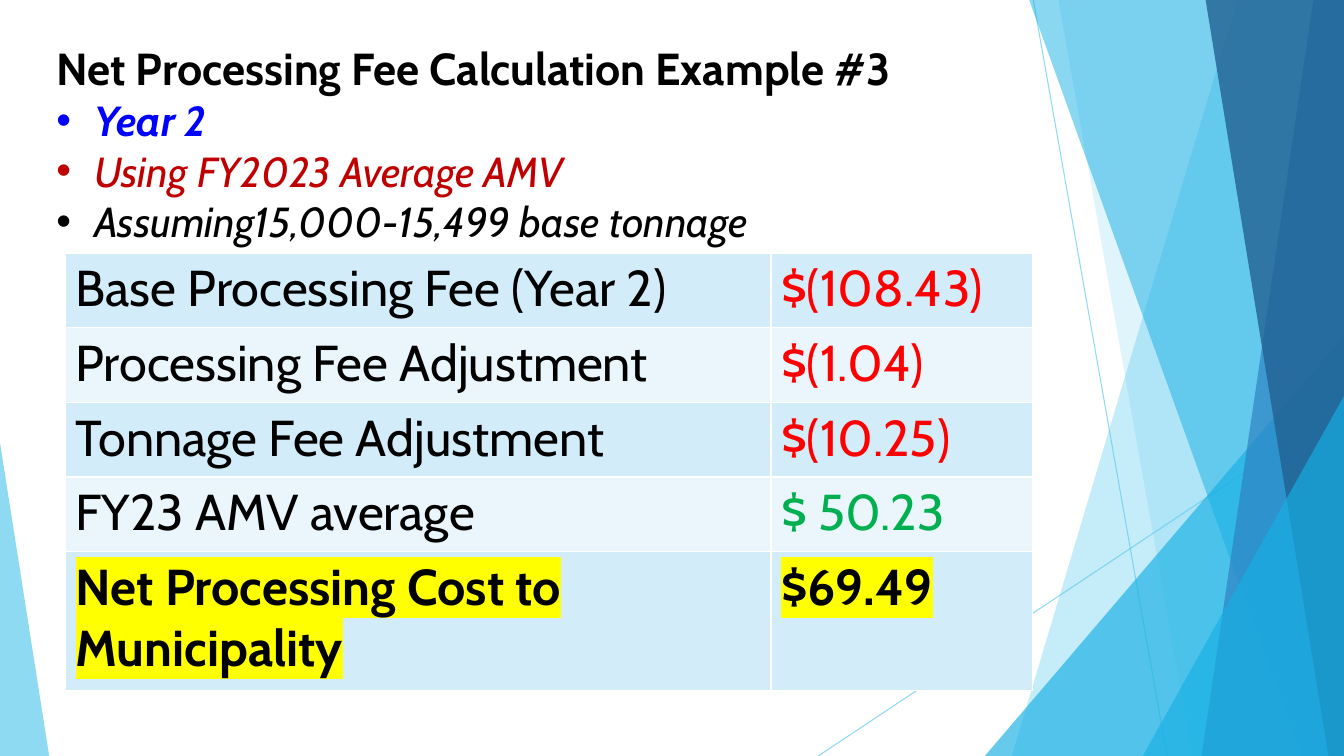
from lxml import etree
from pptx import Presentation, util as u
from pptx.dml.color import RGBColor
from pptx.enum import shapes, text
from pptx.oxml.ns import qn

THEME = dict(
    font="Cabin", title=32, bullet=30, cell=36,
    black="000000", blue="0000FF", dark_red="C00000", red="FF0000", green="00B050",
    yellow="FFFF00", white="FFFFFF", band=("D2ECF9", "EAF6FC"),
    sky="5FCBEF", azure="17B0E4", steel="2E83C3", navy="226292",
)
WIDTH, HEIGHT, BLEED = 33.87, 19.05, -0.02

RAYS = [((26.04, 0), (29.41, HEIGHT)), ((WIDTH, 10.24), (20.62, HEIGHT))]
FACETS = [
    ("panel", 31.19, 25.5, "sky", 36),
    ("panel", 26.67, 30.05, "sky", 20),
    ("triangle", (24.82, 8.46, WIDTH), 1, "azure", 66),
    ("panel", 25.93, 32.79, "azure", 50),
    ("panel", 33.1, 30.28, "steel", 70),
    ("panel", 30.38, 33.48, "navy", 80),
    ("triangle", (28.8, 9.98, WIDTH), 1, "azure", 66),
    ("triangle", (0, 11.15, 1.24), 0, "sky", 70),
]
HEADING_BOX = (1.17, 0.91, 32.69, 5.46)
HEADING = [
    ("Net Processing Fee Calculation Example #3", "title", "black", dict(bold=True)),
    ("Year 2", "bullet", "blue", dict(bold=True, italic=True)),
    ("Using FY2023 Average AMV", "bullet", "dark_red", dict(italic=True)),
    ("Assuming15,000-15,499 base tonnage", "bullet", "black", dict(italic=True)),
]
INDENT = 0.95
TABLE_AT = (1.65, 6.38)
COLUMNS = (17.78, 6.58)
ROW, TOTAL_ROW = 1.88, 3.5
FEES = [
    ("Base Processing Fee (Year 2)", "$(108.43)", "red"),
    ("Processing Fee Adjustment", "$(1.04)", "red"),
    ("Tonnage Fee Adjustment", "$(10.25)", "red"),
    ("FY23 AMV average", "$ 50.23", "green"),
    ("Net Processing Cost to Municipality", "$69.49", "black"),
]


def cm(*values):
    return [u.Cm(v) for v in values]


def rgb(name):
    return RGBColor.from_string(THEME[name])


def sub(parent, tag, **attrs):
    el = etree.SubElement(parent, qn(tag))
    for key, value in attrs.items():
        el.set(key, str(value))
    return el


def paint(fill, color, alpha, root):
    fill.solid()
    fill.fore_color.rgb = rgb(color)
    sub(next(root.iter(qn("a:srgbClr"))), "a:alpha", val=alpha * 1000)


def write(p, words, size, color, **fmt):
    r = p.add_run()
    r.text = words
    r.font.color.rgb = rgb(color)
    for key, value in dict(name=THEME["font"], size=u.Pt(THEME[size]), **fmt).items():
        setattr(r.font, key, value)
    return r


def add_ray(s, start, end):
    ln = s.shapes.add_connector(shapes.MSO_CONNECTOR.STRAIGHT, *cm(*start, *end))
    ln.line.width = u.Pt(0.75)
    paint(ln.line.fill, "sky", 70, ln._element.spPr)
    sub(ln._element.spPr, "a:effectLst")


def add_facet(s, kind, place, tip, color, alpha):
    if kind == "panel":
        fb = s.shapes.build_freeform(*cm(place, BLEED), scale=1.0)
        fb.add_line_segments([cm(WIDTH, BLEED), cm(WIDTH, HEIGHT), cm(tip, HEIGHT)], close=True)
        sp = fb.convert_to_shape()
    else:
        left, top, right = place
        sp = s.shapes.add_shape(shapes.MSO_SHAPE.ISOSCELES_TRIANGLE,
                                *cm(left, top, right - left, HEIGHT - top))
        sp.adjustments[0] = tip
    sp.shadow.inherit = False
    sp.line.fill.background()
    paint(sp.fill, color, alpha, sp._element.spPr)


def add_heading(s):
    tf = s.shapes.add_textbox(*cm(*HEADING_BOX)).text_frame
    tf.word_wrap = True
    tf.auto_size = text.MSO_AUTO_SIZE.SHAPE_TO_FIT_TEXT
    for i, (words, size, color, fmt) in enumerate(HEADING):
        p = tf.add_paragraph() if i else tf.paragraphs[0]
        write(p, words, size, color, **fmt)
        if size == "bullet":
            pPr = p._p.get_or_add_pPr()
            pPr.set("marL", str(u.Cm(INDENT)))
            pPr.set("indent", str(-u.Cm(INDENT)))
            sub(pPr, "a:buFont", typeface="Arial")
            sub(pPr, "a:buChar", char="•")


def add_borders(cell):
    tcPr = cell._tc.get_or_add_tcPr()
    for side in ("L", "R", "T", "B"):
        ln = sub(tcPr, f"a:ln{side}", w=u.Pt(1))
        sub(sub(ln, "a:solidFill"), "a:srgbClr", val=THEME["white"])


def add_fees(s):
    heights = [ROW] * (len(FEES) - 1) + [TOTAL_ROW]
    tbl = s.shapes.add_table(len(FEES), len(COLUMNS),
                             *cm(*TABLE_AT, sum(COLUMNS), sum(heights))).table
    tbl.first_row = tbl.horz_banding = False
    for col, width in zip(tbl.columns, COLUMNS):
        col.width = u.Cm(width)
    for i, (label, amount, color) in enumerate(FEES):
        tbl.rows[i].height = u.Cm(heights[i])
        total = i == len(FEES) - 1
        for j, (words, ink) in enumerate([(label, "black"), (amount, color)]):
            cell = tbl.cell(i, j)
            add_borders(cell)
            cell.fill.solid()
            cell.fill.fore_color.rgb = RGBColor.from_string(THEME["band"][i % 2])
            r = write(cell.text_frame.paragraphs[0], words, "cell", ink, bold=total)
            if total:
                rPr = r._r.get_or_add_rPr()
                mark = sub(rPr, "a:highlight")
                sub(mark, "a:srgbClr", val=THEME["yellow"])
                rPr.find(qn("a:solidFill")).addnext(mark)


def main():
    prs = Presentation()
    prs.slide_width, prs.slide_height = cm(WIDTH, HEIGHT)
    s = prs.slides.add_slide(prs.slide_layouts[6])
    for ray in RAYS:
        add_ray(s, *ray)
    for facet in FACETS:
        add_facet(s, *facet)
    add_heading(s)
    add_fees(s)
    prs.save("out.pptx")


if __name__ == "__main__":
    main()
